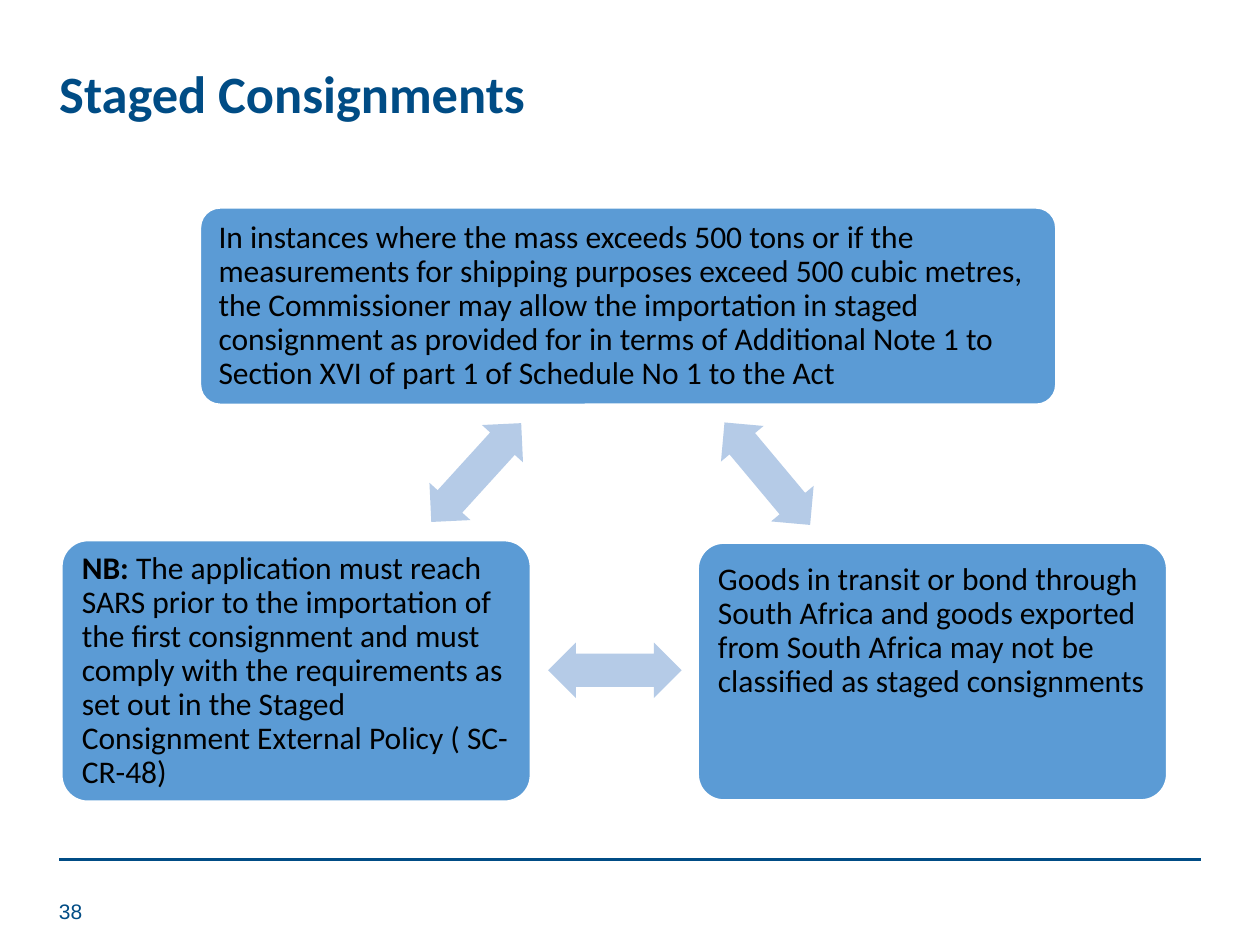
from lxml.etree import SubElement
from pptx import Presentation
from pptx.dml.color import RGBColor
from pptx.enum.shapes import MSO_CONNECTOR, MSO_SHAPE
from pptx.enum.text import MSO_ANCHOR, PP_ALIGN
from pptx.oxml.ns import qn
from pptx.util import Inches, Pt

COLORS = {"navy": "004C85", "box": "5B9BD5", "arrow": "B5CBE7",
          "white": "FFFFFF", "text": "000000"}

BOXES = [
    ((1.59, 1.65, 6.79, 1.56), MSO_ANCHOR.MIDDLE, [
        ("In instances where the mass exceeds 500 tons or if the measurements "
         "for shipping purposes exceed 500 cubic metres, the Commissioner may "
         "allow the importation in staged consignment as provided for in terms "
         "of Additional Note 1 to Section XVI of part 1 of Schedule No 1 to the "
         "Act", False)]),
    ((5.54, 4.31, 3.72, 2.04), MSO_ANCHOR.TOP, [
        ("Goods in transit or bond through South Africa and goods exported from "
         "South Africa may not be classified as staged consignments", False)]),
    ((0.49, 4.29, 3.72, 2.07), MSO_ANCHOR.MIDDLE, [
        ("NB: ", True),
        ("The application must reach SARS prior to the importation of the first "
         "consignment and must comply with the requirements as set out in the "
         "Staged Consignment External Policy ( SC-CR-48)", False)]),
]
ARROWS = [(5.56, 3.54, 50.1), (4.35, 5.1, 180), (3.25, 3.53, 312.3)]


def rgb(name):
    return RGBColor.from_string(COLORS[name])


def set_font(font, name, size, color):
    font.name = name
    font.size = Pt(size)
    font.color.rgb = rgb(color)


def add_title(s, text):
    sp = s.shapes.title
    sp.left, sp.top = Inches(0.37), Inches(0.48)
    sp.width, sp.height = Inches(8.62), Inches(0.58)
    tf = sp.text_frame
    tf.text = text
    tf.vertical_anchor = MSO_ANCHOR.MIDDLE
    p = tf.paragraphs[0]
    p.alignment = PP_ALIGN.LEFT
    p.line_spacing = 0.9
    set_font(p.font, "Calibri", 30, "navy")
    p.font.bold = True


def add_footer(s, number):
    line = s.shapes.add_connector(MSO_CONNECTOR.STRAIGHT, Inches(0.47),
                                  Inches(6.82), Inches(9.53), Inches(6.82))
    line.line.color.rgb = rgb("navy")
    line.line.width = Pt(2)
    SubElement(line._element.spPr, qn("a:effectLst"))
    sp = s.shapes.add_textbox(Inches(0.37), Inches(7.03), Inches(0.46), Inches(0.4))
    tf = sp.text_frame
    tf.word_wrap = True
    tf.vertical_anchor = MSO_ANCHOR.MIDDLE
    tf.text = number
    set_font(tf.paragraphs[0].font, "Arial", 12, "navy")


def add_shape(s, kind, bounds, fill):
    sp = s.shapes.add_shape(kind, *map(Inches, bounds))
    sp.shadow.inherit = False
    sp.fill.solid()
    sp.fill.fore_color.rgb = rgb(fill)
    return sp


def add_box(s, bounds, anchor, runs):
    sp = add_shape(s, MSO_SHAPE.ROUNDED_RECTANGLE, bounds, "box")
    sp.adjustments[0] = 0.1
    sp.line.color.rgb = rgb("white")
    sp.line.width = Pt(1)
    tf = sp.text_frame
    tf.word_wrap = True
    tf.vertical_anchor = anchor
    tf.margin_left = tf.margin_right = Inches(0.1)
    tf.margin_top = tf.margin_bottom = Inches(0.1)
    p = tf.paragraphs[0]
    p.alignment = PP_ALIGN.LEFT
    p.line_spacing = 0.9
    set_font(p.font, "Calibri", 18, "text")
    for text, bold in runs:
        r = p.add_run()
        r.text = text
        r.font.bold = bold


def add_arrow(s, left, top, rotation):
    sp = add_shape(s, MSO_SHAPE.LEFT_RIGHT_ARROW, (left, top, 1.06, 0.44), "arrow")
    sp.adjustments[0] = 0.6
    sp.adjustments[1] = 0.5
    sp.line.fill.background()
    sp.rotation = rotation


def main():
    prs = Presentation()
    prs.slide_width, prs.slide_height = Inches(10), Inches(7.5)
    s = prs.slides.add_slide(prs.slide_layouts[5])
    add_title(s, "Staged Consignments")
    add_footer(s, "38")
    for box, arrow in zip(BOXES, ARROWS):
        add_box(s, *box)
        add_arrow(s, *arrow)
    prs.save("out.pptx")


if __name__ == "__main__":
    main()
